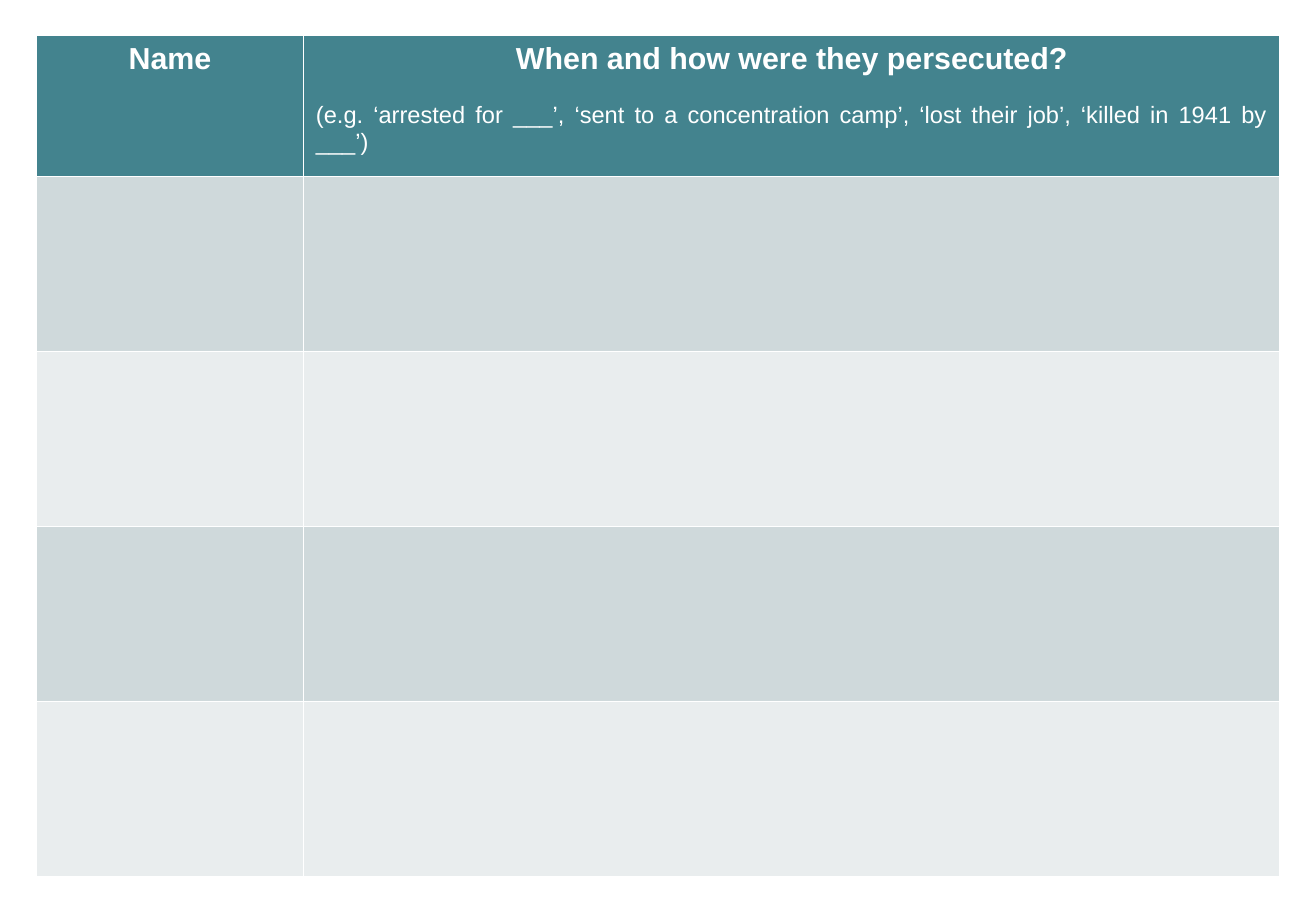
import pptx
import pptx.util
import pptx.dml.color
import pptx.enum.text

Cm = pptx.util.Cm
Align = pptx.enum.text.PP_ALIGN


def paint(code):
    return pptx.dml.color.RGBColor.from_string(code)


def write(para, text, size=18, bold=True, align=Align.CENTER, before=0):
    para.alignment = align
    if before:
        para.space_before = pptx.util.Pt(before)
    run = para.add_run()
    run.text = text
    run.font.name = "Arial"
    run.font.size = pptx.util.Pt(size)
    run.font.bold = bold
    run.font.color.rgb = paint("FFFFFF")


deck = pptx.Presentation()
deck.slide_width = Cm(27.51)
deck.slide_height = Cm(19.05)
slide = deck.slides.add_slide(deck.slide_layouts[6])

widths = [5.59, 20.41]
heights = [2.95] + [3.66] * 4
fills = ["43838E"] + ["CFD9DB", "E9EDEE"] * 2

frame = slide.shapes.add_table(
    len(heights), len(widths), Cm(0.76), Cm(0.74), Cm(sum(widths)), Cm(sum(heights))
)
table = frame.table
for col, width in zip(table.columns, widths):
    col.width = Cm(width)
for row, height, fill in zip(table.rows, heights, fills):
    row.height = Cm(height)
    for cell in row.cells:
        cell.fill.solid()
        cell.fill.fore_color.rgb = paint(fill)

for cell, head in zip(table.rows[0].cells, ["Name", "When and how were they persecuted?"]):
    write(cell.text_frame.paragraphs[0], head)

hint = table.cell(0, 1).text_frame.add_paragraph()
write(
    hint,
    "(e.g. ‘arrested for ___’, ‘sent to a concentration camp’, ‘lost their job’, ‘killed in 1941 by ___’)",
    size=14,
    bold=False,
    align=Align.JUSTIFY,
    before=16,
)

deck.save("out.pptx")
